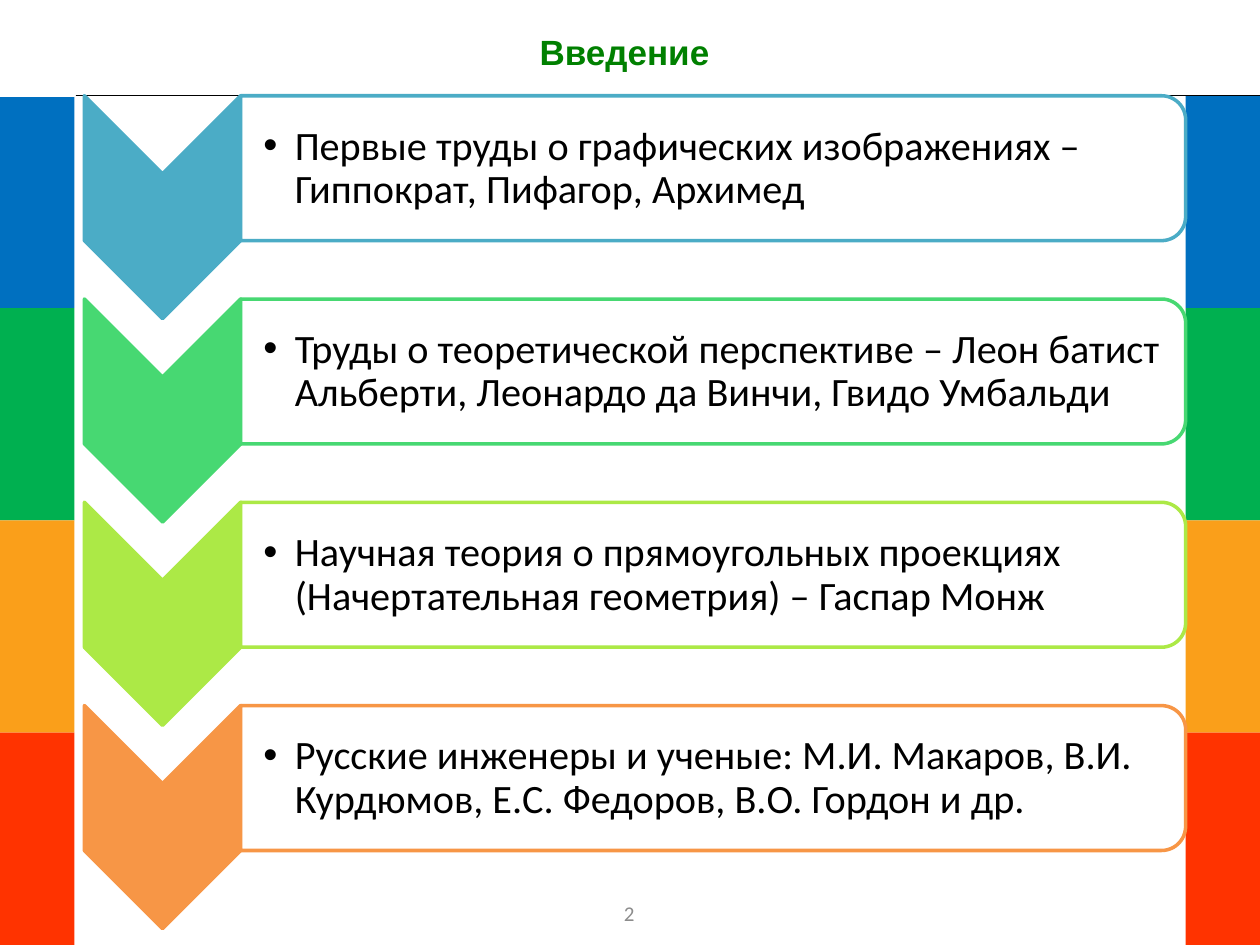
from dataclasses import dataclass

from pptx import Presentation
from pptx.dml.color import RGBColor
from pptx.enum.shapes import MSO_CONNECTOR, MSO_SHAPE
from pptx.enum.text import MSO_ANCHOR, PP_ALIGN
from pptx.oxml.ns import qn
from pptx.util import Inches, Pt
from lxml import etree

RECT = MSO_SHAPE.RECTANGLE
CHEVRON = MSO_SHAPE.CHEVRON
ROUND = MSO_SHAPE.ROUND_2_SAME_RECTANGLE
STRAIGHT = MSO_CONNECTOR.STRAIGHT
MIDDLE = MSO_ANCHOR.MIDDLE
CENTER, LEFT = PP_ALIGN.CENTER, PP_ALIGN.LEFT


@dataclass(frozen=True)
class Theme:
    white: str = "FFFFFF"
    black: str = "000000"
    green: str = "008000"
    gray: str = "8C8C8C"
    bands: tuple = ("0070C0", "00B050", "FA9F1A", "FF3300")
    steps: tuple = ("4BACC6", "47D872", "ACE946", "F79646")
    head: str = "Arial"
    body: str = "Calibri"
    title: int = 20
    text: int = 23
    note: int = 12
    rule: float = 0.75
    edge: int = 2


THEME = Theme()
TEXTS = (
    "Первые труды о графических изображениях – Гиппократ, Пифагор, Архимед",
    "Труды о теоретической перспективе – Леон батист Альберти, "
    "Леонардо да Винчи, Гвидо Умбальди",
    "Научная теория о прямоугольных проекциях (Начертательная геометрия) – Гаспар Монж",
    "Русские инженеры и ученые: М.И. Макаров, В.И. Курдюмов, "
    "Е.С. Федоров, В.О. Гордон и др.",
)


def color(code):
    return RGBColor.from_string(code)


def inches(*box):
    return [Inches(v) for v in box]


def add_part(slide, kind, box, fill, line=None, turn=False):
    """Add a filled shape that covers box, turned a quarter if asked."""
    x, y, w, h = box
    if turn:
        x, y, w, h = x + (w - h) / 2, y + (h - w) / 2, h, w
    part = slide.shapes.add_shape(kind, *inches(x, y, w, h))
    part.shadow.inherit = False
    part.rotation = 90 if turn else 0
    part.fill.solid()
    part.fill.fore_color.rgb = color(fill)
    if line:
        part.line.color.rgb = color(line)
        part.line.width = Pt(THEME.edge)
    else:
        part.line.fill.background()
    return part


def set_text(shape, text, font, size, tint, align=CENTER, bold=False):
    frame = shape.text_frame
    frame.text = text
    frame.word_wrap = True
    frame.vertical_anchor = MIDDLE
    para = frame.paragraphs[0]
    para.alignment = align
    face = para.runs[0].font
    face.name, face.size, face.bold = font, Pt(size), bold
    face.color.rgb = color(tint)
    return para


def add_bands(slide, box):
    """Stack the colour bands evenly in a side column."""
    x, y, w, h = box
    step = h / len(THEME.bands)
    for i, tint in enumerate(THEME.bands):
        add_part(slide, RECT, (x, y + i * step, w, step), tint)


def add_header(slide, box):
    """Place the title, the rule below it and the white corner."""
    x, y, w, h = box
    base = y + h
    rule = slide.shapes.add_connector(STRAIGHT, *inches(x, base, x + w, base))
    rule.line.color.rgb = color(THEME.black)
    rule.line.width = Pt(THEME.rule)
    etree.SubElement(rule.element.spPr, qn("a:effectLst"))

    title = slide.shapes.title
    title.left, title.top, title.width, title.height = inches(
        x + 0.43, y + 0.13, 9.13, 0.55)
    set_text(title, "Введение ", THEME.head, THEME.title, THEME.green, bold=True)
    add_part(slide, RECT, (x, base - 0.58, 0.59, 0.58), THEME.white, THEME.white)


def add_bullet(para):
    props = para._p.get_or_add_pPr()
    props.set("marL", str(Inches(0.25)))
    props.set("indent", str(-Inches(0.25)))
    etree.SubElement(props, qn("a:buFont")).set("typeface", THEME.head)
    etree.SubElement(props, qn("a:buChar")).set("char", "•")


def add_step(slide, box, text, tint):
    """Place one chevron with its rounded panel and bullet text."""
    x, y, w, h = box
    arrow, bar = 1.24, 1.15
    add_part(slide, CHEVRON, (x, y, arrow, h), tint, tint, turn=True)
    left, wide = x + arrow, w - arrow
    panel = add_part(slide, ROUND, (left, y, wide, bar), THEME.white, tint, turn=True)
    shade = panel.element.spPr.find(qn("a:solidFill")).find(qn("a:srgbClr"))
    etree.SubElement(shade, qn("a:alpha")).set("val", "90000")

    label = slide.shapes.add_textbox(*inches(left, y + 0.06, wide - 0.06, bar - 0.11))
    para = set_text(label, text, THEME.body, THEME.text, THEME.black, LEFT)
    para.line_spacing = 0.9
    add_bullet(para)
    frame = label.text_frame
    frame.margin_left = Inches(0.18)
    frame.margin_top = frame.margin_right = frame.margin_bottom = Inches(0.02)


def add_steps(slide, box):
    """Spread the steps evenly from the top to the bottom of the box."""
    x, y, w, h = box
    high = 1.77
    pitch = (h - high) / (len(TEXTS) - 1)
    for i, (text, tint) in enumerate(zip(TEXTS, THEME.steps)):
        add_step(slide, (x, y + i * pitch, w, high), text, tint)


def add_number(slide, box):
    label = slide.shapes.add_textbox(*inches(*box))
    set_text(label, "2", THEME.body, THEME.note, THEME.gray)


def main():
    deck = Presentation()
    deck.slide_width, deck.slide_height = inches(10, 7.5)
    slide = deck.slides.add_slide(deck.slide_layouts[5])
    add_number(slide, (3.83, 7.05, 2.33, 0.4))
    for x in (0, 9.41):
        add_bands(slide, (x, 0.76, 0.59, 6.74))
    add_header(slide, (0, 0, 10, 0.76))
    add_steps(slide, (0.67, 0.76, 8.74, 6.61))
    deck.save("out.pptx")


if __name__ == "__main__":
    main()
